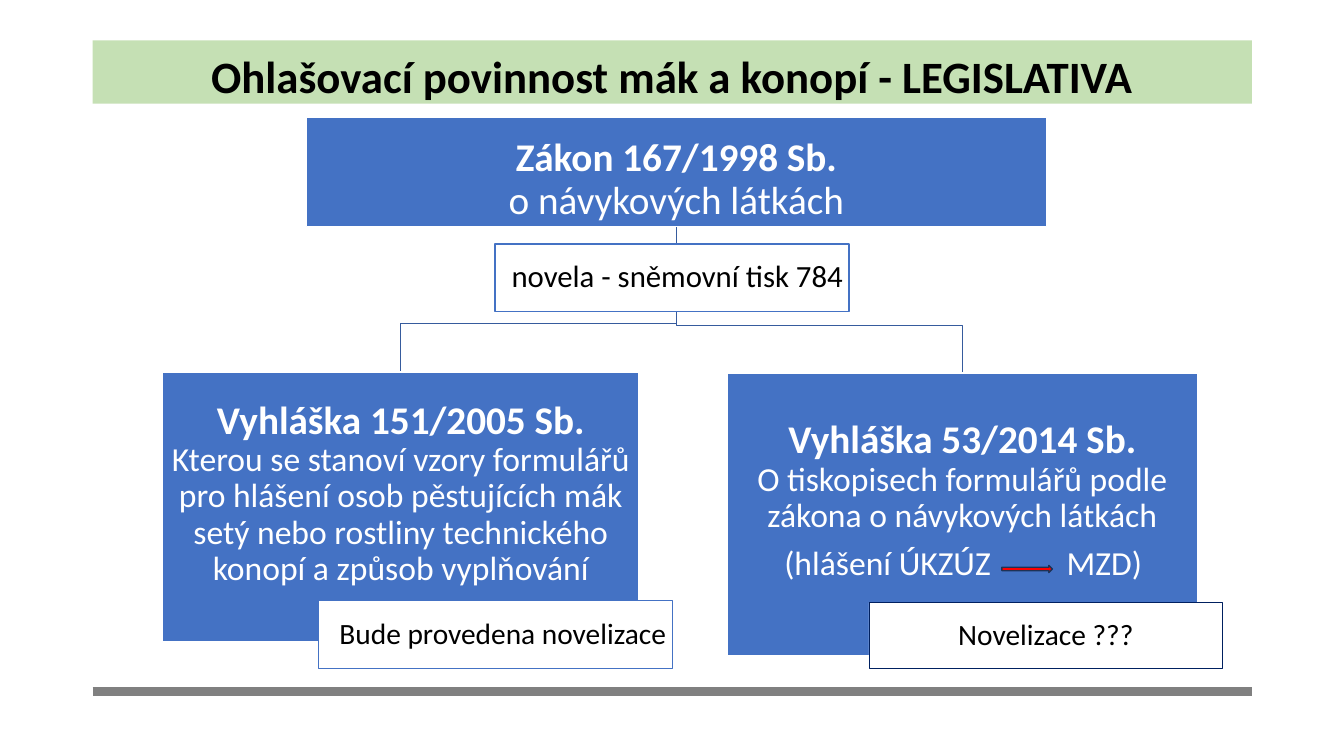
from dataclasses import dataclass
from typing import Optional

from lxml import etree
from pptx import Presentation
from pptx.dml.color import RGBColor
from pptx.enum.shapes import MSO_CONNECTOR, MSO_SHAPE
from pptx.enum.text import MSO_ANCHOR, MSO_AUTO_SIZE, PP_ALIGN
from pptx.oxml.ns import qn
from pptx.util import Emu, Inches, Pt

LEFT, CENTER, RIGHT = PP_ALIGN.LEFT, PP_ALIGN.CENTER, PP_ALIGN.RIGHT
MIDDLE, NO_FIT = MSO_ANCHOR.MIDDLE, MSO_AUTO_SIZE.NONE
RECTANGLE, RIGHT_ARROW = MSO_SHAPE.RECTANGLE, MSO_SHAPE.RIGHT_ARROW
STRAIGHT = MSO_CONNECTOR.STRAIGHT
TITLE_ONLY = 5
SLIDE_W, SLIDE_H = Inches(13.33), Inches(7.5)


@dataclass(frozen=True)
class Theme:
    font: str = "Calibri"
    white: str = "FFFFFF"
    black: str = "000000"
    banner: str = "C5E0B4"
    blue: str = "4472C4"
    branch: str = "365B9D"
    navy: str = "002060"
    red: str = "FF0000"
    arrow_edge: str = "1E3256"
    grey: str = "808080"
    title_size: float = 32
    heading_size: float = 28
    body_size: float = 24
    amendment_size: float = 22
    note_size: float = 21


THEME = Theme()


@dataclass(frozen=True)
class Area:
    """Place on the slide, in percent of its width and height."""
    left: float
    top: float
    width: float
    height: float

    @property
    def middle(self) -> float:
        return self.left + self.width / 2

    def emu(self) -> tuple:
        return across(self.left), down(self.top), across(self.width), down(self.height)


@dataclass(frozen=True)
class Line:
    text: str
    size: float
    color: str = THEME.white
    bold: bool = False
    align: PP_ALIGN = CENTER
    spacing: float = 0.9
    after: float = 0
    tabs: tuple = ()


@dataclass(frozen=True)
class Box:
    area: Area
    lines: tuple = ()
    fill: str = THEME.blue
    edge: Optional[str] = THEME.white
    edge_width: float = 1
    insets: tuple = (0.02, 0.02, 0.02, 0.28)
    shape: MSO_SHAPE = RECTANGLE


def across(share: float) -> Emu:
    return Emu(round(SLIDE_W * share / 100))


def down(share: float) -> Emu:
    return Emu(round(SLIDE_H * share / 100))


def rgb(color: str) -> RGBColor:
    return RGBColor.from_string(color)


def set_all(target, values: dict) -> None:
    for name, value in values.items():
        setattr(target, name, value)


def write(frame, lines: tuple) -> None:
    set_all(frame, {"word_wrap": True, "auto_size": NO_FIT, "vertical_anchor": MIDDLE})
    for index, line in enumerate(lines):
        paragraph = frame.paragraphs[0] if index == 0 else frame.add_paragraph()
        set_all(paragraph, {"alignment": line.align, "line_spacing": line.spacing,
                            "space_before": Pt(0), "space_after": Pt(line.after)})
        if line.tabs:
            stops = etree.SubElement(paragraph._p.get_or_add_pPr(), qn("a:tabLst"))
            for stop in line.tabs:
                etree.SubElement(stops, qn("a:tab"), pos=str(Inches(stop)), algn="l")
        run = paragraph.add_run()
        run.text = line.text
        set_all(run.font, {"name": THEME.font, "size": Pt(line.size), "bold": line.bold})
        run.font.color.rgb = rgb(line.color)


def draw_box(slide, box: Box) -> None:
    shape = slide.shapes.add_shape(box.shape, *box.area.emu())
    shape.shadow.inherit = False
    shape.fill.solid()
    shape.fill.fore_color.rgb = rgb(box.fill)
    shape.line.color.rgb = rgb(box.edge)
    shape.line.width = Pt(box.edge_width)
    sides = ("margin_left", "margin_top", "margin_right", "margin_bottom")
    set_all(shape.text_frame, dict(zip(sides, map(Inches, box.insets))))
    write(shape.text_frame, box.lines)


def draw_branch(slide, parent: Area, child: Area, bend: float) -> None:
    corners = [(parent.middle, parent.top + parent.height), (parent.middle, bend),
               (child.middle, bend), (child.middle, child.top)]
    start, *rest = [(across(x), down(y)) for x, y in corners]
    builder = slide.shapes.build_freeform(*start)
    builder.add_line_segments(rest, close=False)
    branch = builder.convert_to_shape()
    branch.shadow.inherit = False
    branch.fill.background()
    branch.line.color.rgb = rgb(THEME.branch)
    branch.line.width = Pt(1)


def draw_rule(slide, left: float, right: float, y: float) -> None:
    rule = slide.shapes.add_connector(STRAIGHT, across(left), down(y), across(right), down(y))
    rule.line.color.rgb = rgb(THEME.grey)
    rule.line.width = Pt(6)
    etree.SubElement(rule._element.spPr, qn("a:effectLst"))


def draw_title(slide, area: Area, line: Line) -> None:
    title = slide.shapes.title
    set_all(title, dict(zip(("left", "top", "width", "height"), area.emu())))
    title.fill.solid()
    title.fill.fore_color.rgb = rgb(THEME.banner)
    write(title.text_frame, (line,))


def heading(text: str) -> Line:
    return Line(text, THEME.heading_size, bold=True)


def body(text: str, **changes) -> Line:
    return Line(text, THEME.body_size, after=8.4, **changes)


def note(area: Area, text: str, size: float, align: PP_ALIGN,
         edge: str = THEME.blue, edge_width: float = 1) -> Box:
    line = Line(text, size, THEME.black, align=align, after=7.5)
    return Box(area, (line,), THEME.white, edge, edge_width, (0.06, 0.02, 0.06, 0.02))


# Places of the title and the hierarchy
TITLE = Area(6.9, 5.33, 86.25, 8.4)
LAW = Area(22.8, 15.47, 55.05, 14.53)
DECREE_2005 = Area(12.08, 49.2, 35.48, 35.73)
DECREE_2014 = Area(54.08, 49.33, 35.03, 37.47)
NOTE_W = 26.33

BOXES = (
    # Act and its amendment
    Box(LAW, (heading("Zákon 167/1998 Sb."),
              Line("o návykových látkách", THEME.heading_size)),
        insets=(0.02, 0.19, 0.02, 0.02)),
    note(Area(36.83, 32.27, NOTE_W, 8.93), "novela - sněmovní tisk 784",
         THEME.amendment_size, RIGHT),
    # Decrees with their notes
    Box(DECREE_2005, (heading("Vyhláška 151/2005 Sb."),
                      body("Kterou se stanoví vzory formulářů pro hlášení osob pěstujících "
                           "mák setý nebo rostliny technického konopí a způsob vyplňování"))),
    note(Area(23.7, 79.47, NOTE_W, 8.93), "Bude provedena novelizace", THEME.note_size, RIGHT),
    Box(DECREE_2014, (heading("Vyhláška 53/2014 Sb."),
                      body("O tiskopisech formulářů podle zákona o návykových látkách"),
                      body("\t(hlášení ÚKZÚZ\tMZD)", align=LEFT, tabs=(0.55, 3.35)))),
    note(Area(64.65, 79.73, NOTE_W, 8.67), "Novelizace ???", THEME.note_size, CENTER,
         THEME.navy, 0.5),
    # Arrow between the two offices
    Box(Area(74.55, 74.8, 3.75, 0.93), fill=THEME.red, edge=THEME.arrow_edge,
        shape=RIGHT_ARROW),
)


def main() -> None:
    deck = Presentation()
    set_all(deck, {"slide_width": SLIDE_W, "slide_height": SLIDE_H})
    slide = deck.slides.add_slide(deck.slide_layouts[TITLE_ONLY])
    draw_title(slide, TITLE, Line("Ohlašovací povinnost mák a konopí - LEGISLATIVA",
                                  THEME.title_size, THEME.black, True,
                                  spacing=1.15, after=10))
    draw_rule(slide, TITLE.left, TITLE.left + TITLE.width, 91.47)
    for decree, bend in ((DECREE_2014, 43.07), (DECREE_2005, 42.8)):
        draw_branch(slide, LAW, decree, bend)
    for box in BOXES:
        draw_box(slide, box)
    deck.save("out.pptx")


if __name__ == "__main__":
    main()
